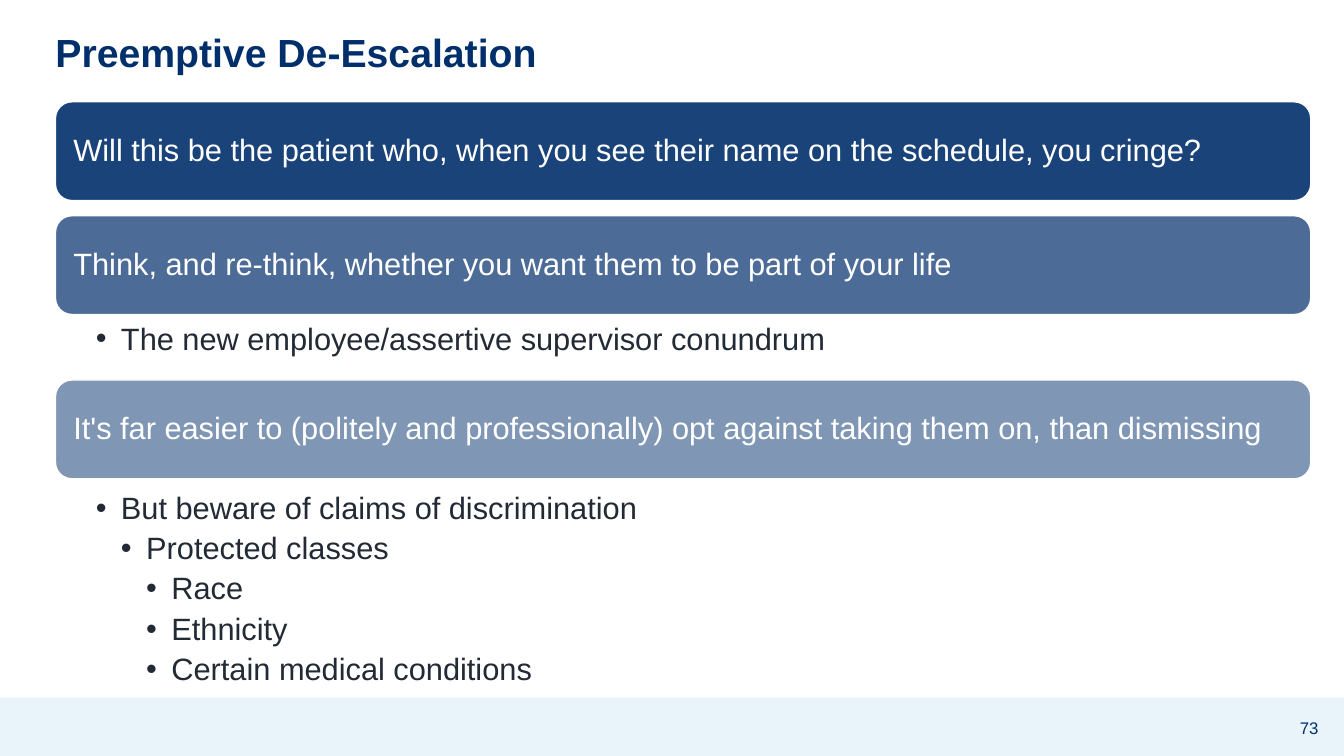
from pptx import Presentation
from pptx.dml.color import RGBColor
from pptx.enum.shapes import MSO_SHAPE
from pptx.enum.text import MSO_ANCHOR, PP_ALIGN
from pptx.oxml.ns import qn
from pptx.util import Inches, Pt
from lxml.etree import SubElement

WIDTH, HEIGHT = 13.33, 7.5
NAVY, WHITE, INK, PALE = "002F6B", "FFFFFF", "222A35", "E8F4FA"
FONT = "Arial"
TITLE = "Preemptive De-Escalation"
PAGE_NUMBER = "73"

# Heading, opacity in percent, space below the card, gap above bullets, (level, bullet) pairs
SECTIONS = [
    ("Will this be the patient who, when you see their name on the schedule, you cringe?",
     90, 0.15, 0, []),
    ("Think, and re-think, whether you want them to be part of your life",
     70, 0.65, 0.06, [(1, "The new employee/assertive supervisor conundrum")]),
    ("It's far easier to (politely and professionally) opt against taking them on, than dismissing",
     50, 2.07, 0.11, [
         (1, "But beware of claims of discrimination"),
         (2, "Protected classes"),
         (3, "Race"),
         (3, "Ethnicity"),
         (3, "Certain medical conditions"),
     ]),
]
CARD_LEFT, CARD_TOP, CARD_WIDTH, CARD_HEIGHT = 0.55, 1.01, 12.45, 0.98
CARD_INSET = 0.13
BULLET_INDENT = 0.25
BAND_TOP = 6.92


def color(value):
    return RGBColor.from_string(value)


def set_frame(frame, anchor, left, top, right, bottom):
    frame.word_wrap = True
    frame.vertical_anchor = anchor
    frame.margin_left, frame.margin_top = Inches(left), Inches(top)
    frame.margin_right, frame.margin_bottom = Inches(right), Inches(bottom)


def write(paragraph, text, size, text_color, bold=False, align=PP_ALIGN.LEFT, spacing=0.9):
    paragraph.alignment = align
    paragraph.line_spacing = spacing
    run = paragraph.add_run()
    run.text = text
    run.font.name, run.font.size, run.font.bold = FONT, Pt(size), bold
    run.font.color.rgb = color(text_color)


def add_block(slide, kind, box, fill):
    shape = slide.shapes.add_shape(kind, *map(Inches, box))
    shape.shadow.inherit = False
    shape.fill.solid()
    shape.fill.fore_color.rgb = color(fill)
    shape.line.fill.background()
    return shape


def add_card(slide, top, heading, opacity):
    card = add_block(slide, MSO_SHAPE.ROUNDED_RECTANGLE,
                     (CARD_LEFT, top, CARD_WIDTH, CARD_HEIGHT), NAVY)
    fill_color = card._element.spPr.find(f"{qn('a:solidFill')}/{qn('a:srgbClr')}")
    SubElement(fill_color, qn("a:alpha"), val=str(opacity * 1000))
    card.line.color.rgb = color(WHITE)
    card.line.width = Pt(1)
    set_frame(card.text_frame, MSO_ANCHOR.MIDDLE, *[CARD_INSET] * 4)
    write(card.text_frame.paragraphs[0], heading, 22, WHITE)


def add_bullets(slide, top, height, bullets):
    box = slide.shapes.add_textbox(*map(Inches, (CARD_LEFT, top, CARD_WIDTH, height)))
    frame = box.text_frame
    set_frame(frame, MSO_ANCHOR.TOP, 0.4, 0.03, 0.17, 0.03)
    for index, (level, text) in enumerate(bullets):
        paragraph = frame.add_paragraph() if index else frame.paragraphs[0]
        paragraph.level = level
        properties = paragraph._p.get_or_add_pPr()
        properties.set("marL", str(Inches(BULLET_INDENT * level)))
        properties.set("indent", str(-Inches(BULLET_INDENT)))
        SubElement(properties, qn("a:buFont"), typeface=FONT)
        SubElement(properties, qn("a:buChar"), char="•")
        paragraph.space_before, paragraph.space_after = Pt(0), Pt(5)
        write(paragraph, text, 22, INK)


def main():
    presentation = Presentation()
    presentation.slide_width, presentation.slide_height = Inches(WIDTH), Inches(HEIGHT)
    slide = presentation.slides.add_slide(presentation.slide_layouts[5])

    add_block(slide, MSO_SHAPE.RECTANGLE, (0, BAND_TOP, WIDTH, HEIGHT - BAND_TOP), PALE)
    number = slide.shapes.add_textbox(*map(Inches, (12.68, 7.02, 0.61, 0.4)))
    set_frame(number.text_frame, MSO_ANCHOR.MIDDLE, 0.1, 0.05, 0.1, 0.05)
    write(number.text_frame.paragraphs[0], PAGE_NUMBER, 12, NAVY,
          align=PP_ALIGN.CENTER, spacing=1.0)

    title = slide.shapes.title
    title.left, title.top, title.width, title.height = map(Inches, (0.45, 0.15, 12.09, 0.78))
    set_frame(title.text_frame, MSO_ANCHOR.MIDDLE, 0.1, 0.05, 0.1, 0.05)
    write(title.text_frame.paragraphs[0], TITLE, 28, NAVY, bold=True)

    top = CARD_TOP
    for heading, opacity, space_below, bullet_gap, bullets in SECTIONS:
        add_card(slide, top, heading, opacity)
        top += CARD_HEIGHT
        if bullets:
            add_bullets(slide, top + bullet_gap, space_below - bullet_gap, bullets)
        top += space_below

    presentation.save("out.pptx")


if __name__ == "__main__":
    main()
